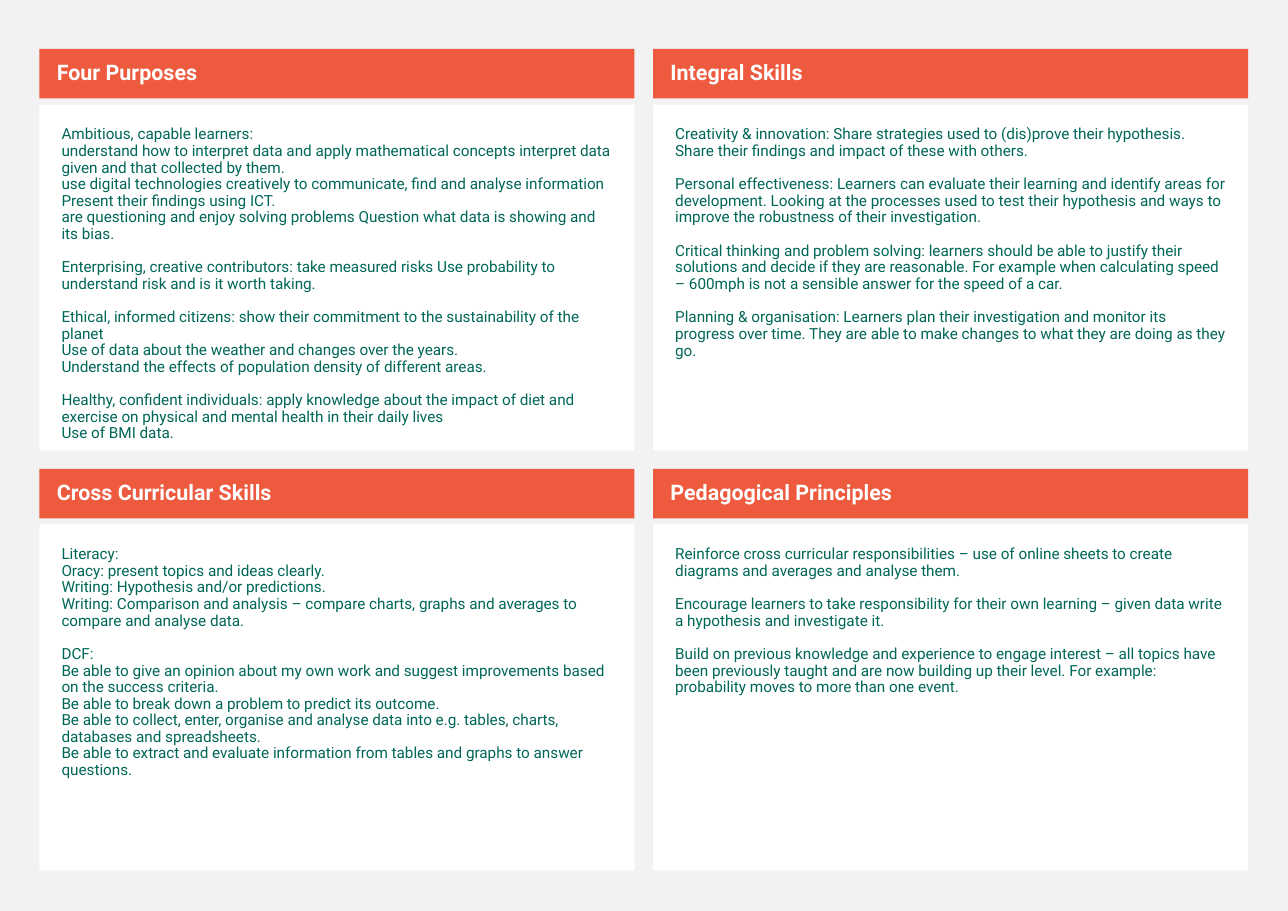
"""Build a slide of four titled cards on learning purposes, skills and principles."""
from pptx import Presentation
from pptx import util as u
from pptx.dml import color
from pptx.enum import shapes, text

HUES = {"page": "F2F2F2", "head": "ED5A3E", "card": "FFFFFF", "title": "FFFFFF", "body": "006758"}
HEAD = {
    "frame": {"margin_left": u.Cm(0.4), "margin_right": u.Cm(0.25), "margin_top": u.Cm(0.13),
              "margin_bottom": u.Cm(0.13), "vertical_anchor": text.MSO_ANCHOR.MIDDLE},
    "font": {"name": "Roboto", "size": u.Pt(14), "bold": True},
}
BODY = {
    "frame": {"margin_left": u.Cm(0.51), "margin_right": u.Cm(0.51), "margin_top": u.Cm(0.51),
              "margin_bottom": u.Cm(0.51), "vertical_anchor": text.MSO_ANCHOR.TOP},
    "font": {"name": "Roboto", "size": u.Pt(10), "bold": False},
}
LEFT, TOP, WIDE = 0.91, 1.13, 13.72
STEP_X, STEP_Y = 14.15, 9.68
HEAD_TALL, BODY_DROP, BODY_TALL = 1.14, 1.28, 7.98

CARDS = [
    ("Four Purposes", [
        ["Ambitious, capable learners:",
         "understand how to interpret data and apply mathematical concepts interpret data given and that collected by them.",
         "use digital technologies creatively to communicate, find and analyse information Present their findings using ICT.",
         "are questioning and enjoy solving problems Question what data is showing and its bias."],
        ["Enterprising, creative contributors: take measured risks Use probability to understand risk and is it worth taking."],
        ["Ethical, informed citizens: show their commitment to the sustainability of the planet",
         "Use of data about the weather and changes over the years.",
         "Understand the effects of population density of different areas."],
        ["Healthy, confident individuals: apply knowledge about the impact of diet and exercise on physical and mental health in their daily lives",
         "Use of BMI data."],
    ]),
    ("Integral Skills", [
        ["Creativity & innovation: Share strategies used to (dis)prove their hypothesis. Share their findings and impact of these with others."],
        ["Personal effectiveness: Learners can evaluate their learning and identify areas for development. Looking at the processes used to test their hypothesis and ways to improve the robustness of their investigation."],
        ["Critical thinking and problem solving: learners should be able to justify their solutions and decide if they are reasonable. For example when calculating speed – 600mph is not a sensible answer for the speed of a car."],
        ["Planning & organisation: Learners plan their investigation and monitor its progress over time. They are able to make changes to what they are doing as they go."],
    ]),
    ("Cross Curricular Skills", [
        ["Literacy:",
         "Oracy: present topics and ideas clearly.",
         "Writing: Hypothesis and/or predictions.",
         "Writing: Comparison and analysis – compare charts, graphs and averages to compare and analyse data."],
        ["DCF:",
         "Be able to give an opinion about my own work and suggest improvements based on the success criteria.",
         "Be able to break down a problem to predict its outcome.",
         "Be able to collect, enter, organise and analyse data into e.g. tables, charts, databases and spreadsheets.",
         "Be able to extract and evaluate information from tables and graphs to answer questions."],
    ]),
    ("Pedagogical Principles", [
        ["Reinforce cross curricular responsibilities – use of online sheets to create diagrams and averages and analyse them."],
        ["Encourage learners to take responsibility for their own learning – given data write a hypothesis and investigate it."],
        ["Build on previous knowledge and experience to engage interest – all topics have been previously taught and are now building up their level. For example: probability moves to more than one event."],
    ]),
]


def tint(fill, hue):
    fill.solid()
    fill.fore_color.rgb = color.RGBColor.from_string(HUES[hue])


def add_box(x, y, tall, hue, ink, style, groups):
    box = slide.shapes.add_shape(shapes.MSO_SHAPE.RECTANGLE, u.Cm(x), u.Cm(y), u.Cm(WIDE), u.Cm(tall))
    box.shadow.inherit = False
    tint(box.fill, hue)
    box.line.fill.background()
    frame = box.text_frame
    frame.word_wrap = True
    for key, value in style["frame"].items():
        setattr(frame, key, value)
    para = frame.paragraphs[0]
    for group in groups:
        for row, line in enumerate(group):
            if para.runs:
                para = frame.add_paragraph()
                para.space_before = u.Pt(0 if row else 11)
            para.alignment = text.PP_ALIGN.LEFT
            para.line_spacing = 0.9
            run = para.add_run()
            run.text = line
            for key, value in style["font"].items():
                setattr(run.font, key, value)
            tint(run.font.fill, ink)


deck = Presentation()
deck.slide_width, deck.slide_height = u.Cm(29.7), u.Cm(21)
slide = deck.slides.add_slide(deck.slide_layouts[6])
tint(slide.background.fill, "page")

for spot, (title, groups) in enumerate(CARDS):
    row, col = divmod(spot, 2)
    x, y = LEFT + col * STEP_X, TOP + row * STEP_Y
    add_box(x, y + BODY_DROP, BODY_TALL, "card", "body", BODY, groups)
    add_box(x, y, HEAD_TALL, "head", "title", HEAD, [[title]])

deck.save("out.pptx")
